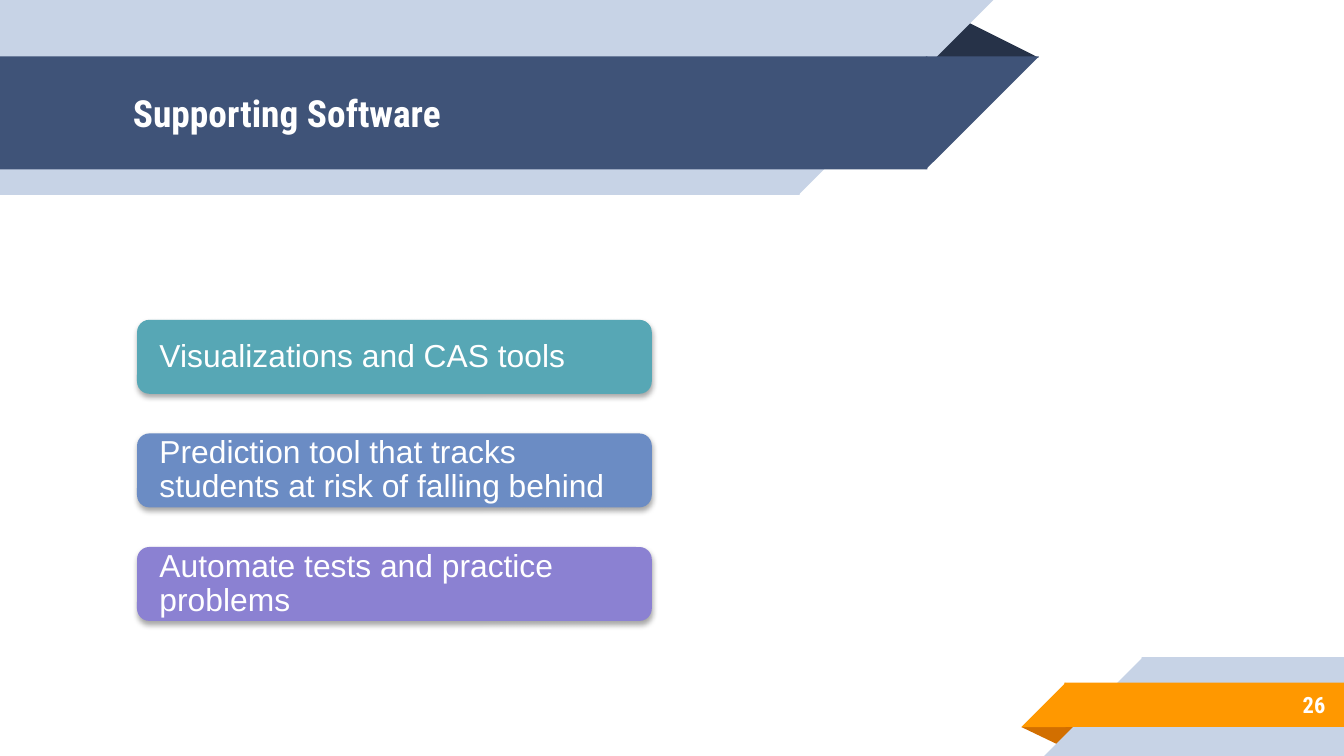
import lxml.etree
import pptx
import pptx.dml.color
import pptx.enum.shapes
import pptx.enum.text
import pptx.oxml.ns
import pptx.util

RGBColor = pptx.dml.color.RGBColor
Inches = pptx.util.Inches
Shape = pptx.enum.shapes.MSO_SHAPE
Align = pptx.enum.text.PP_ALIGN
qn = pptx.oxml.ns.qn

WHITE = RGBColor(0xFF, 0xFF, 0xFF)
PALE_BLUE = RGBColor(0xC7, 0xD3, 0xE6)
NAVY = RGBColor(0x3F, 0x53, 0x78)
DARK_NAVY = RGBColor(0x26, 0x32, 0x48)
ORANGE = RGBColor(0xFF, 0x98, 0x00)
DARK_ORANGE = RGBColor(0xD2, 0x6F, 0x00)
TEAL = RGBColor(0x57, 0xA7, 0xB5)
BLUE = RGBColor(0x6B, 0x8C, 0xC4)
PURPLE = RGBColor(0x8B, 0x81, 0xD2)

SLIDE_WIDTH = 10
SLIDE_HEIGHT = SLIDE_WIDTH * 9 / 16
OVERLAP = 0.01
HEADING_FONT, BODY_FONT = "Roboto Condensed", "Arial"
TOOLS = [
    ("Visualizations and CAS tools", TEAL),
    ("Prediction tool that tracks students at risk of falling behind", BLUE),
    ("Automate tests and practice problems", PURPLE),
]


def add_filled_shape(slide, kind, box, color, rotation=0, flipped=False):
    """Add a borderless preset shape in a box of inches."""
    shape = slide.shapes.add_shape(kind, *map(Inches, box))
    shape.shadow.inherit = False
    shape.fill.solid()
    shape.fill.fore_color.rgb = color
    shape.line.fill.background()
    shape.rotation = rotation
    if flipped:
        shape._element.spPr.find(qn("a:xfrm")).set("flipH", "1")
    return shape


def write_text(shape, text, *, font, size, bold=False, align=Align.LEFT,
               side_inset=0.1, end_inset=0.1, line_spacing=1.0):
    """Fill a shape or text box with one vertically centred paragraph."""
    frame = shape.text_frame
    frame.word_wrap = True
    frame.vertical_anchor = pptx.enum.text.MSO_ANCHOR.MIDDLE
    frame.margin_left = frame.margin_right = Inches(side_inset)
    frame.margin_top = frame.margin_bottom = Inches(end_inset)
    paragraph = frame.paragraphs[0]
    paragraph.alignment = align
    paragraph.line_spacing = line_spacing
    run = paragraph.add_run()
    run.text = text
    run.font.name = font
    run.font.size = pptx.util.Pt(size)
    run.font.bold = bold
    run.font.color.rgb = WHITE


def add_soft_shadow(shape):
    """Give a shape a soft shadow that falls straight down."""
    effects = shape._element.spPr.find(qn("a:effectLst"))
    shadow = lxml.etree.SubElement(
        effects, qn("a:outerShdw"), blurRad=str(pptx.util.Pt(3.1)),
        dist=str(pptx.util.Pt(1.8)), dir="5400000", rotWithShape="0")
    color = lxml.etree.SubElement(shadow, qn("a:srgbClr"), val="000000")
    lxml.etree.SubElement(color, qn("a:alpha"), val="35000")


def add_left_ribbon(slide, top, width, height, color):
    """Add a band from the left edge whose right end slants at 45 degrees."""
    body = width - height
    add_filled_shape(slide, Shape.RECTANGLE, (0, top, body + OVERLAP, height), color)
    add_filled_shape(slide, Shape.RIGHT_TRIANGLE, (body, top, height, height),
                     color, rotation=180, flipped=True)


def add_right_ribbon(slide, left, top, height, color):
    """Add a band to the right edge whose left end slants at 45 degrees."""
    body = left + height - OVERLAP
    add_filled_shape(slide, Shape.RECTANGLE,
                     (body, top, SLIDE_WIDTH - body, height), color)
    add_filled_shape(slide, Shape.RIGHT_TRIANGLE, (left, top, height, height),
                     color, flipped=True)


def add_fold(slide, box, color, rotation=0):
    """Add the dark triangle where a ribbon folds back."""
    fold = add_filled_shape(slide, Shape.ISOSCELES_TRIANGLE, box, color, rotation)
    fold.adjustments[0] = 0.32


def add_header(slide, title, width, height):
    """Draw the title banner from the top left corner."""
    band_top, band_height = 0.42, 0.84
    add_fold(slide, (width - 0.85, band_top - 0.28, 0.85, 0.28 + OVERLAP), DARK_NAVY)
    add_left_ribbon(slide, 0, width - 0.34, height, PALE_BLUE)
    add_left_ribbon(slide, band_top, width, band_height, NAVY)
    title_box = slide.shapes.add_textbox(
        *map(Inches, (0.89, band_top, 5.75, band_height)))
    write_text(title_box, title, font=HEADING_FONT, size=20, bold=True)


def add_footer(slide, number, left, top):
    """Draw the page number banner in the bottom right corner."""
    band_top, band_height = top + 0.19, 0.33
    add_fold(slide, (left, band_top + band_height, 0.43, 0.14), DARK_ORANGE, 180)
    add_right_ribbon(slide, left + 0.17, top, SLIDE_HEIGHT - top, PALE_BLUE)
    add_right_ribbon(slide, left, band_top, band_height, ORANGE)
    number_box = slide.shapes.add_textbox(
        *map(Inches, (left + 0.73, band_top - 0.01, 1.63, 0.35)))
    write_text(number_box, number, font=HEADING_FONT, size=12, bold=True,
               align=Align.RIGHT)


def add_tool_list(slide, tools, left, top, width, height):
    """Stack one rounded card per tool, evenly spread over the box."""
    card_height = 0.55
    pitch = (height - card_height) / (len(tools) - 1)
    for index, (text, color) in enumerate(tools):
        card = add_filled_shape(
            slide, Shape.ROUNDED_RECTANGLE,
            (left, top + index * pitch, width, card_height), color)
        add_soft_shadow(card)
        write_text(card, text, font=BODY_FONT, size=17, side_inset=0.14,
                   end_inset=0, line_spacing=0.9)


def main():
    """Build and save the slide."""
    presentation = pptx.Presentation()
    presentation.slide_width = Inches(SLIDE_WIDTH)
    presentation.slide_height = Inches(SLIDE_HEIGHT)
    slide = presentation.slides.add_slide(presentation.slide_layouts[6])
    add_header(slide, "Supporting Software", width=7.73, height=1.45)
    add_footer(slide, "26", left=7.6, top=4.89)
    add_tool_list(slide, TOOLS, left=1.02, top=2.38, width=3.83, height=2.24)
    presentation.save("out.pptx")


if __name__ == "__main__":
    main()
